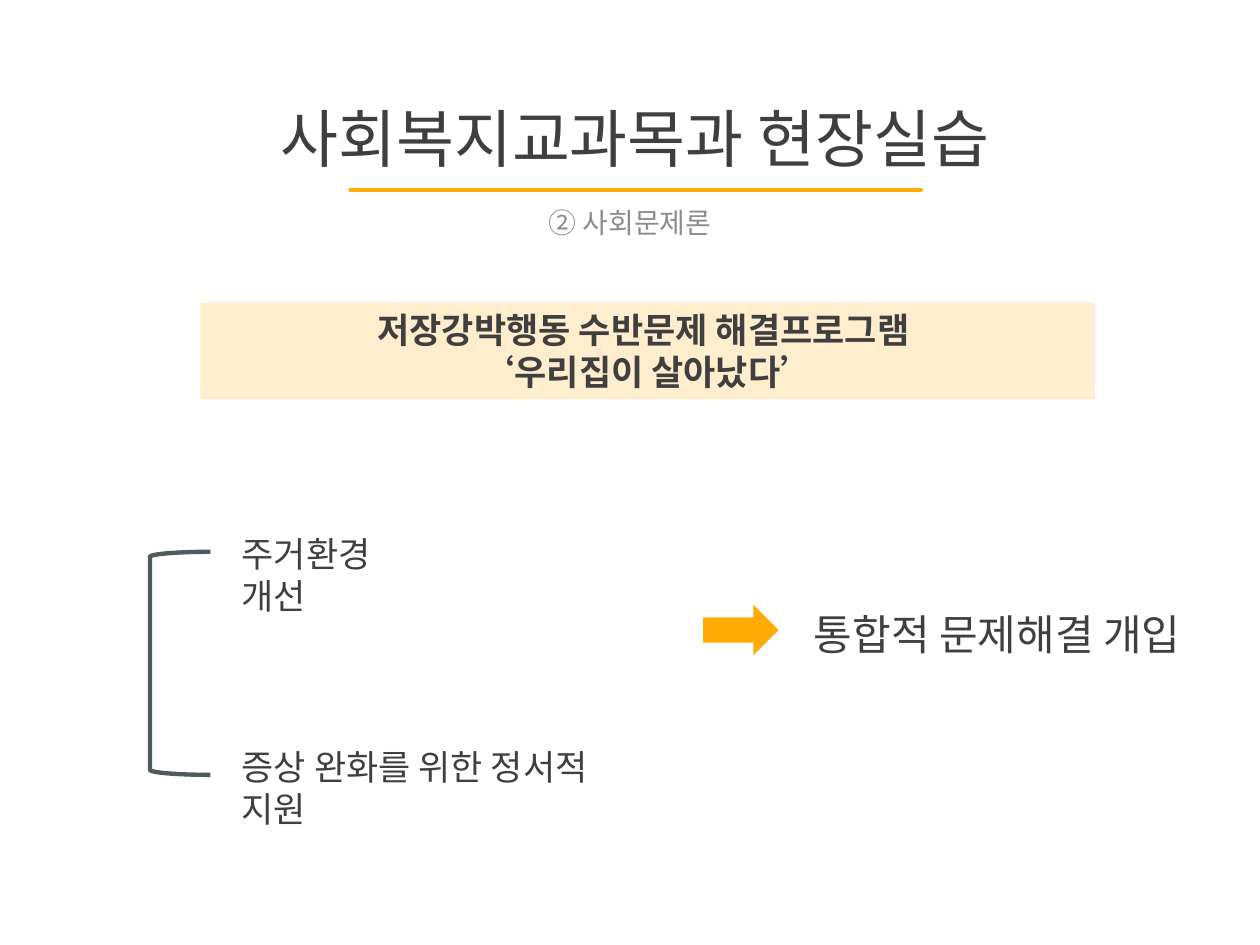
from lxml import etree
from pptx import Presentation
from pptx import util as u
from pptx.dml.color import RGBColor
from pptx.enum import shapes, text
from pptx.oxml.ns import qn

COLORS = {"dark": "3F3F3F", "gray": "8C8C8C", "orange": "FFAB03",
          "cream": "FFEECD", "slate": "50595D"}
FONT = "Noto Sans CJK KR"


def color(name):
    return RGBColor.from_string(COLORS[name])


class SlideBuilder:
    def __init__(self, slide):
        self.slide = slide

    def set_text(self, shape, lines, size, ink="dark", bold=False,
                 anchor=text.MSO_ANCHOR.TOP, **paragraph_format):
        frame = shape.text_frame
        frame.text = "\n".join(lines)
        frame_format = {"word_wrap": True, "auto_size": text.MSO_AUTO_SIZE.NONE,
                        "vertical_anchor": anchor}
        for name, value in frame_format.items():
            setattr(frame, name, value)
        font_format = {"name": FONT, "size": u.Pt(size), "bold": bold}
        for paragraph in frame.paragraphs:
            for name, value in paragraph_format.items():
                setattr(paragraph, name, value)
            for run in paragraph.runs:
                for name, value in font_format.items():
                    setattr(run.font, name, value)
                run.font.color.rgb = color(ink)
                properties = run.font._element
                etree.SubElement(properties, qn("a:ea"), typeface=FONT)

    def title(self, box, wording, **style):
        shape = self.slide.shapes.title
        for name, value in zip(("left", "top", "width", "height"), box):
            setattr(shape, name, u.Inches(value))
        self.set_text(shape, [wording], **style)

    def label(self, box, wording, **style):
        shape = self.slide.shapes.add_textbox(*map(u.Inches, box))
        self.set_text(shape, [wording], **style)

    def shape(self, kind, box, fill=None, line=None, width=1):
        shape = self.slide.shapes.add_shape(kind, *map(u.Inches, box))
        shape.shadow.inherit = False
        if fill:
            shape.fill.solid()
            shape.fill.fore_color.rgb = color(fill)
        else:
            shape.fill.background()
        if line:
            shape.line.color.rgb = color(line)
            shape.line.width = u.Pt(width)
        else:
            shape.line.fill.background()
        return shape

    def rule(self, start, end, ink, width):
        connector = self.slide.shapes.add_connector(
            shapes.MSO_CONNECTOR.STRAIGHT, *map(u.Inches, start + end))
        connector.line.color.rgb = color(ink)
        connector.line.width = u.Pt(width)
        properties = connector._element.spPr
        properties.find(qn("a:ln")).set("cap", "rnd")
        etree.SubElement(properties, qn("a:effectLst"))


def main():
    presentation = Presentation()
    presentation.slide_width = u.Inches(10)
    presentation.slide_height = u.Inches(7.5)
    slide = presentation.slides.add_slide(presentation.slide_layouts[5])
    builder = SlideBuilder(slide)
    center = text.PP_ALIGN.CENTER
    middle = text.MSO_ANCHOR.MIDDLE
    kinds = shapes.MSO_SHAPE

    builder.title((0.86, 0.65, 8.36, 0.95), "사회복지교과목과 현장실습",
                  size=36, anchor=middle, alignment=center, line_spacing=0.9)
    builder.rule((2.78, 1.51), (7.31, 1.51), "orange", 2.25)
    builder.label((0.81, 1.61, 8.38, 0.36), "② 사회문제론",
                  size=16, ink="gray", alignment=center, line_spacing=0.9)

    builder.shape(kinds.RIGHT_ARROW, (5.58, 4.8, 0.6, 0.4), fill="orange")
    builder.label((6.36, 4.78, 3.22, 0.5), "통합적 문제해결 개입", size=24)

    for top, width, wording in ((4.18, 1.7, "주거환경 개선"),
                                (5.87, 3.45, "증상 완화를 위한 정서적 지원")):
        builder.label((1.82, top, width, 0.44), wording, size=20)
    builder.shape(kinds.LEFT_BRACKET, (1.19, 4.38, 0.48, 1.77),
                  line="slate", width=2.5)

    program = builder.shape(kinds.RECTANGLE, (1.59, 2.4, 7.1, 0.77), fill="cream")
    builder.set_text(program, ["저장강박행동 수반문제 해결프로그램 ", "‘우리집이 살아났다’"],
                     size=20, bold=True, anchor=middle, alignment=center)

    presentation.save("out.pptx")


if __name__ == "__main__":
    main()
